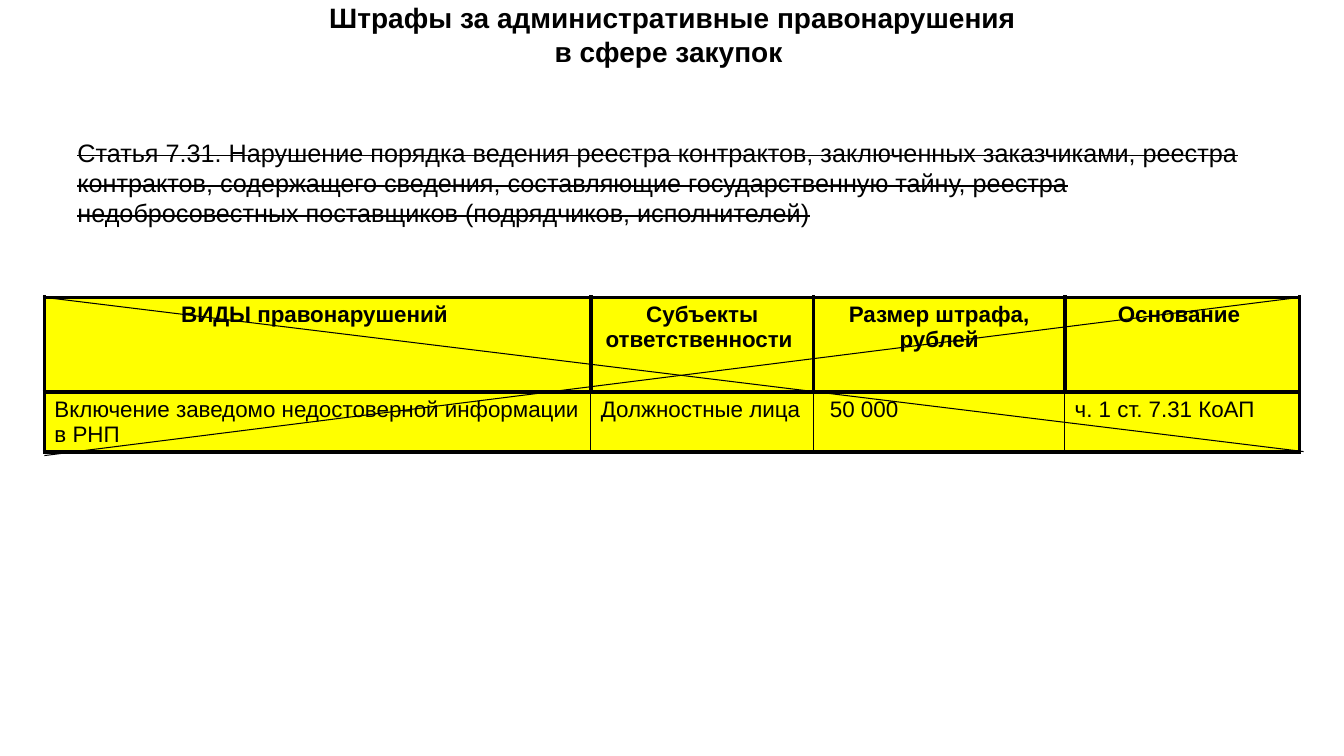
from pptx import Presentation
from pptx.dml.color import RGBColor
from pptx.enum.shapes import MSO_CONNECTOR as Connector
from pptx.enum.text import MSO_ANCHOR as Anchor, MSO_AUTO_SIZE as AutoSize, PP_ALIGN as Align
from pptx.oxml import parse_xml
from pptx.oxml.ns import nsdecls
from pptx.util import Pt

BLACK = RGBColor(0, 0, 0)
YELLOW = RGBColor(255, 255, 0)
EMU_PER_PX = 9144  # 100 px to the inch
THICK, THIN = 3, 1

TITLE = "Штрафы за административные правонарушения\vв сфере закупок "
ARTICLE = (
    "Статья 7.31. Нарушение порядка ведения реестра контрактов, заключенных "
    "заказчиками, реестра контрактов, содержащего сведения, составляющие "
    "государственную тайну, реестра недобросовестных поставщиков "
    "(подрядчиков, исполнителей)"
)
FINES = [
    ["ВИДЫ правонарушений ", "Субъекты ответственности ", "Размер штрафа, рублей", "Основание "],
    ["Включение заведомо недостоверной информации в РНП", "Должностные лица",
     " 50 000", "ч. 1 ст. 7.31 КоАП"],
]
COLUMN_WIDTHS = [542, 221, 249, 233]
ROW_HEIGHTS = [94, 45]


def px(length):
    return round(length * EMU_PER_PX)


class SlideBuilder:
    font_name = "Arial"

    def __init__(self, presentation):
        self.slide = presentation.slides.add_slide(presentation.slide_layouts[5])

    def format_text(self, frame, size, bold=False, align=Align.LEFT):
        for paragraph in frame.paragraphs:
            paragraph.alignment = align
            font = paragraph.font
            font.name, font.size, font.bold = self.font_name, Pt(size), bold
            font.color.rgb = BLACK

    def title(self, text, left, top, width, height):
        shape = self.slide.shapes.title
        shape.left, shape.top, shape.width, shape.height = map(px, (left, top, width, height))
        frame = shape.text_frame
        frame.text = text
        frame.word_wrap = True
        frame.auto_size = AutoSize.NONE
        frame.vertical_anchor = Anchor.MIDDLE
        self.format_text(frame, 20, bold=True, align=Align.CENTER)

    def struck_text(self, text, left, top, width, height):
        box = self.slide.shapes.add_textbox(*map(px, (left, top, width, height)))
        frame = box.text_frame
        frame.text = text
        frame.word_wrap = True
        frame.auto_size = AutoSize.SHAPE_TO_FIT_TEXT
        self.format_text(frame, 18)
        for run in frame.paragraphs[0].runs:
            run._r.get_or_add_rPr().set("strike", "sngStrike")

    def cell_borders(self, cell, widths):
        """Set borders from widths in points, ordered left, right, top, bottom."""
        properties = cell._tc.get_or_add_tcPr()
        for index, (side, width) in enumerate(zip("LRTB", widths)):
            properties.insert(index, parse_xml(
                f'<a:ln{side} {nsdecls("a")} w="{Pt(width)}"><a:solidFill>'
                f'<a:srgbClr val="{BLACK}"/></a:solidFill></a:ln{side}>'))

    def table(self, rows, left, top, column_widths, row_heights):
        table = self.slide.shapes.add_table(
            len(rows), len(column_widths), px(left), px(top),
            px(sum(column_widths)), px(sum(row_heights))).table
        table.horz_banding = False
        for column, width in zip(table.columns, column_widths):
            column.width = px(width)
        last = len(column_widths) - 1
        for row_index, texts in enumerate(rows):
            table.rows[row_index].height = px(row_heights[row_index])
            header = row_index == 0
            inner = THICK if header else THIN
            for column_index, text in enumerate(texts):
                cell = table.cell(row_index, column_index)
                cell.text = text
                cell.fill.solid()
                cell.fill.fore_color.rgb = YELLOW
                self.format_text(cell.text_frame, 16, bold=header,
                                 align=Align.CENTER if header else Align.LEFT)
                self.cell_borders(cell, [
                    THICK if column_index == 0 else inner,
                    THICK if column_index == last else inner,
                    THICK, THICK])

    def line(self, start_x, start_y, end_x, end_y):
        line = self.slide.shapes.add_connector(
            Connector.STRAIGHT, *map(px, (start_x, start_y, end_x, end_y)))
        line.line.color.rgb = BLACK
        line.line.width = Pt(0.75)
        line._element.spPr.append(parse_xml(f'<a:effectLst {nsdecls("a")}/>'))


def main():
    presentation = Presentation()
    presentation.slide_width, presentation.slide_height = px(1333), px(750)
    builder = SlideBuilder(presentation)
    builder.title(TITLE, 217, 0, 900, 68)
    builder.table(FINES, 44, 295, COLUMN_WIDTHS, ROW_HEIGHTS)
    builder.struck_text(ARTICLE, 67, 131, 1226, 101)
    builder.line(44, 295, 1293, 448)
    builder.line(1289, 295, 44, 452)
    presentation.save("out.pptx")


if __name__ == "__main__":
    main()
